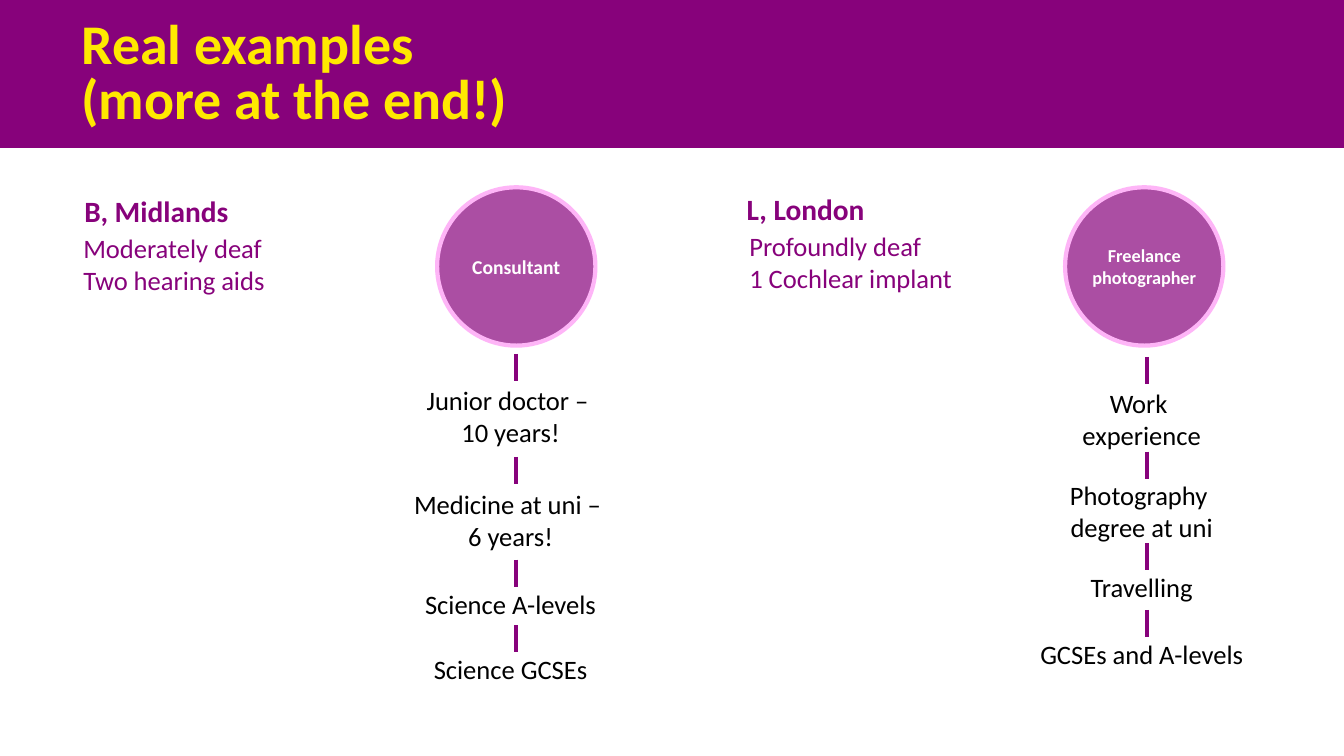
"""Build a slide with two career paths, each read from the job at the top back to school."""
from pptx import Presentation
from pptx.dml.color import RGBColor
from pptx.enum.shapes import MSO_CONNECTOR, MSO_SHAPE
from pptx.enum.text import MSO_ANCHOR, MSO_AUTO_SIZE, PP_ALIGN
from pptx.oxml.ns import qn
from pptx.util import Cm, Pt
from lxml import etree

PURPLE, ORCHID, PINK = "87027B", "AB4EA3", "FEB5F7"
YELLOW, WHITE, BLACK = "FFE900", "FFFFFF", "000000"
CIRCLE_TOP, CIRCLE_SIZE = 4.72, 3.99
STEP_WIDTH, LINK_LENGTH = 7, 0.68


def color(value):
    return RGBColor.from_string(value)


def write(shape, paragraphs, size, text_color, bold=False, align=PP_ALIGN.LEFT):
    frame = shape.text_frame
    frame.word_wrap = True
    for index, text in enumerate(paragraphs):
        paragraph = frame.paragraphs[0] if index == 0 else frame.add_paragraph()
        paragraph.text = text
        paragraph.alignment = align
        font = paragraph.font
        font.name, font.size, font.bold = "Calibri", Pt(size), bold
        font.color.rgb = color(text_color)


careers = [
    {
        "name": "B, Midlands", "name_at": (1.88, 4.75),
        "details": ["Moderately deaf", "Two hearing aids"], "details_at": (1.85, 5.72),
        "job": "Consultant", "job_size": 14, "circle_left": 11.02,
        "link_x": 13.0, "step_center": 12.87,
        "steps": [
            ("Junior doctor – \n10 years!", 8.92, 9.55),
            ("Medicine at uni – \n6 years!", 11.51, 12.17),
            ("Science A-levels", 14.1, 14.68),
            ("Science GCSEs", 15.75, 16.33),
        ],
    },
    {
        "name": "L, London", "name_at": (18.57, 4.7),
        "details": ["Profoundly deaf", "1 Cochlear implant"], "details_at": (18.64, 5.66),
        "job": "Freelance photographer", "job_size": 13, "circle_left": 26.85,
        "link_x": 28.91, "step_center": 28.78,
        "steps": [
            ("Work \nexperience", 8.99, 9.63),
            ("Photography \ndegree at uni", 11.38, 11.94),
            ("Travelling", 13.69, 14.27),
            ("GCSEs and A-levels", 15.37, 15.95),
        ],
    },
]

presentation = Presentation()
presentation.slide_width, presentation.slide_height = Cm(33.88), Cm(19.05)
slide = presentation.slides.add_slide(presentation.slide_layouts[5])
shapes = slide.shapes

band = shapes.add_shape(MSO_SHAPE.RECTANGLE, 0, 0, presentation.slide_width, Cm(3.73))
band.shadow.inherit = False
band.fill.solid()
band.fill.fore_color.rgb = color(PURPLE)
band.line.fill.background()

title = shapes.title
title._element.addprevious(band._element)
title.left, title.top, title.width, title.height = Cm(1.8), Cm(0.91), Cm(17.3), Cm(2)
title.text_frame.auto_size = MSO_AUTO_SIZE.NONE
title.text_frame.vertical_anchor = MSO_ANCHOR.MIDDLE
write(title, ["Real examples \n(more at the end!)"], 40, YELLOW, bold=True)
title.text_frame.paragraphs[0].line_spacing = Pt(39.2)

for career in careers:
    left, top = career["name_at"]
    name = shapes.add_textbox(Cm(left), Cm(top), Cm(6.9), Cm(1.14))
    write(name, [career["name"]], 21, PURPLE, bold=True)

    left, top = career["details_at"]
    details = shapes.add_textbox(Cm(left), Cm(top), Cm(6.9), Cm(1.88))
    write(details, career["details"], 19, PURPLE)

    circle = shapes.add_shape(MSO_SHAPE.OVAL, Cm(career["circle_left"]), Cm(CIRCLE_TOP),
                              Cm(CIRCLE_SIZE), Cm(CIRCLE_SIZE))
    circle.shadow.inherit = False
    circle.fill.solid()
    circle.fill.fore_color.rgb = color(ORCHID)
    circle.line.color.rgb = color(PINK)
    circle.line.width = Pt(3)
    frame = circle.text_frame
    frame.margin_left = frame.margin_right = frame.margin_top = frame.margin_bottom = 0
    frame.vertical_anchor = MSO_ANCHOR.MIDDLE
    write(circle, [career["job"]], career["job_size"], WHITE, bold=True, align=PP_ALIGN.CENTER)

    link_x = Cm(career["link_x"])
    for text, link_top, text_top in career["steps"]:
        link = shapes.add_connector(MSO_CONNECTOR.STRAIGHT, link_x, Cm(link_top),
                                    link_x, Cm(link_top + LINK_LENGTH))
        link.line.color.rgb = color(PURPLE)
        link.line.width = Pt(3)
        etree.SubElement(link._element.spPr, qn("a:effectLst"))

        height = 1.88 if "\n" in text else 1.07
        step = shapes.add_textbox(Cm(career["step_center"] - STEP_WIDTH / 2), Cm(text_top),
                                  Cm(STEP_WIDTH), Cm(height))
        write(step, [text], 19, BLACK, align=PP_ALIGN.CENTER)

presentation.save("out.pptx")
